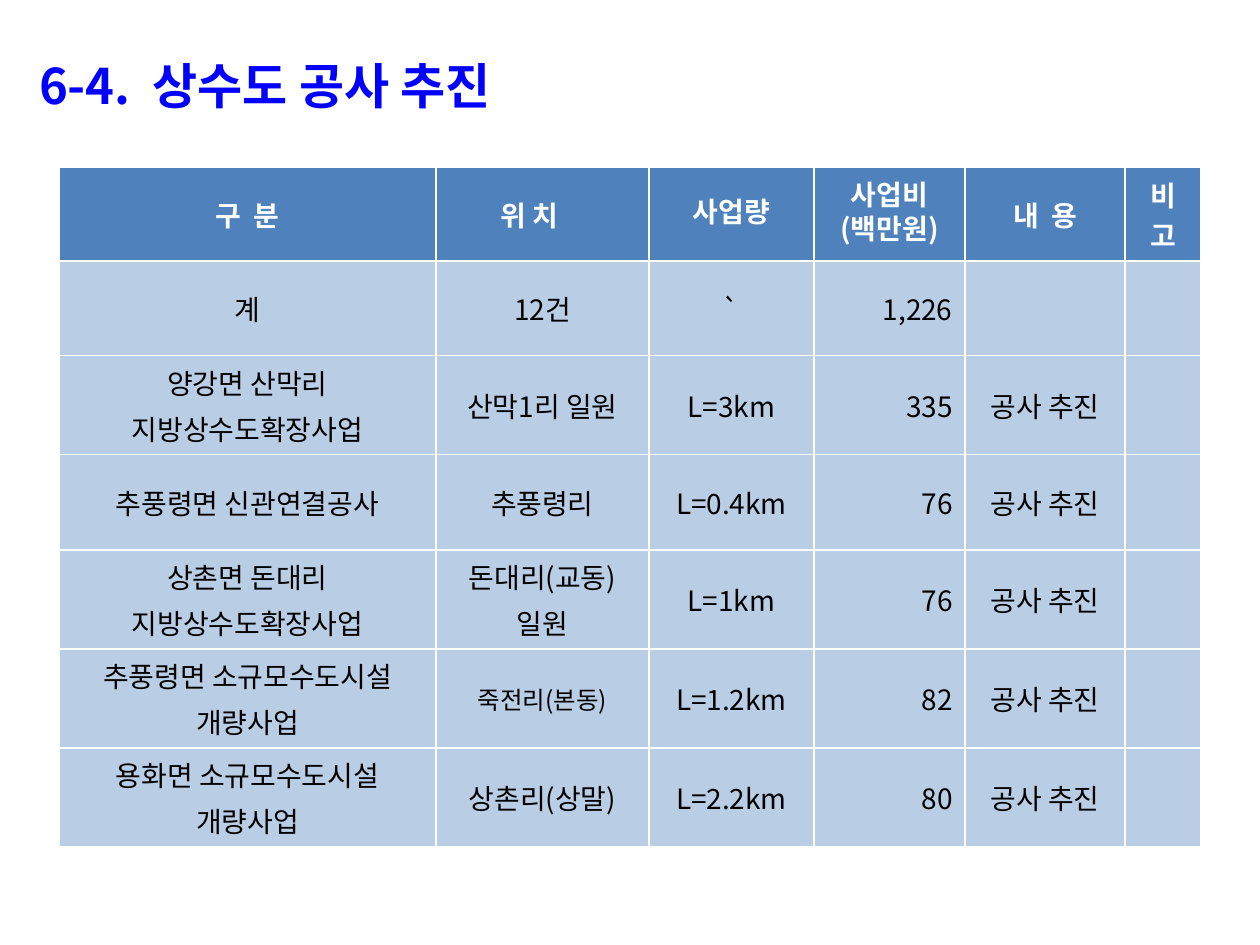
from pptx import Presentation
from pptx.dml.color import RGBColor
from pptx.enum.text import MSO_ANCHOR, PP_ALIGN
from pptx.oxml.ns import qn
from pptx.util import Inches, Pt
from lxml import etree

CENTER, LEFT, RIGHT = PP_ALIGN.CENTER, PP_ALIGN.LEFT, PP_ALIGN.RIGHT
MIDDLE = MSO_ANCHOR.MIDDLE
FONT = "Noto Sans CJK KR"
COLORS = {
    "title": "0000FF",
    "header": "4F81BD",
    "body": "B9CDE5",
    "white": "FFFFFF",
    "text": "000000",
}


def add_run(paragraph, text, size, color, bold):
    run = paragraph.add_run()
    run.text = text
    run.font.size = Pt(size)
    run.font.bold = bold
    run.font.name = FONT
    run.font.color.rgb = RGBColor.from_string(COLORS[color])
    # Hangul takes its typeface from the East Asian font
    etree.SubElement(run.font._element, qn("a:ea"), typeface=FONT)


def add_borders(cell):
    properties = cell._tc.get_or_add_tcPr()
    for side in ("a:lnL", "a:lnR", "a:lnT", "a:lnB"):
        line = etree.SubElement(properties, qn(side), w=str(Pt(1)))
        fill = etree.SubElement(line, qn("a:solidFill"))
        etree.SubElement(fill, qn("a:srgbClr"), val=COLORS["white"])


prs = Presentation()
prs.slide_width, prs.slide_height = Inches(10), Inches(7.5)
slide = prs.slides.add_slide(prs.slide_layouts[5])

# Title
title = slide.shapes.title
title.left, title.top = Inches(0.21), Inches(0.39)
title.width, title.height = Inches(4.3), Inches(0.57)
title.text_frame.word_wrap = False
title.text_frame.vertical_anchor = MIDDLE
heading = title.text_frame.paragraphs[0]
heading.alignment = LEFT
add_run(heading, "6-4.  상수도 공사 추진", 28, "title", True)

# Table content: a line break separates paragraphs
rows = [
    ("구  분", "위 치", "사업량", "사업비\n(백만원)", "내  용", "비 고"),
    ("계", "12건", "`", "1,226", "", ""),
    ("양강면 산막리\n지방상수도확장사업", "산막1리 일원", "L=3km", "335", "공사 추진", ""),
    ("추풍령면 신관연결공사", "추풍령리", "L=0.4km", "76", "공사 추진", ""),
    ("상촌면 돈대리\n지방상수도확장사업", "돈대리(교동)\n일원", "L=1km", "76", "공사 추진", ""),
    ("추풍령면 소규모수도시설\n개량사업", "죽전리(본동)", "L=1.2km", "82", "공사 추진", ""),
    ("용화면 소규모수도시설\n개량사업", "상촌리(상말)", "L=2.2km", "80", "공사 추진", ""),
]
column_widths = [2.99, 1.69, 1.31, 1.2, 1.27, 0.6]
row_heights = [0.7, 0.75] + [0.76] * 5
COST_COLUMN = 3
TIGHT_HEADERS = (2, 3)
SMALL_TEXT = "죽전리(본동)"

# Table
table = slide.shapes.add_table(
    len(rows), len(column_widths), Inches(0.47), Inches(1.33),
    Inches(sum(column_widths)), Inches(sum(row_heights))).table
for column, width in zip(table.columns, column_widths):
    column.width = Inches(width)
for row, height in zip(table.rows, row_heights):
    row.height = Inches(height)

for r, texts in enumerate(rows):
    is_header = r == 0
    for c, text in enumerate(texts):
        cell = table.cell(r, c)
        cell.vertical_anchor = MIDDLE
        add_borders(cell)
        cell.fill.solid()
        cell.fill.fore_color.rgb = RGBColor.from_string(
            COLORS["header" if is_header else "body"])
        if not text:
            continue
        for i, line in enumerate(text.split("\n")):
            frame = cell.text_frame
            paragraph = frame.add_paragraph() if i else frame.paragraphs[0]
            paragraph.alignment = RIGHT if c == COST_COLUMN and not is_header else CENTER
            paragraph.space_before = Pt(3.2)
            if is_header and c in TIGHT_HEADERS:
                paragraph.line_spacing = 0.7
            add_run(paragraph, line, 14 if text == SMALL_TEXT else 16,
                    "white" if is_header else "text", is_header)

# The location header sits slightly left of centre
table.cell(0, 1).margin_right = Inches(0.3)

prs.save("out.pptx")
